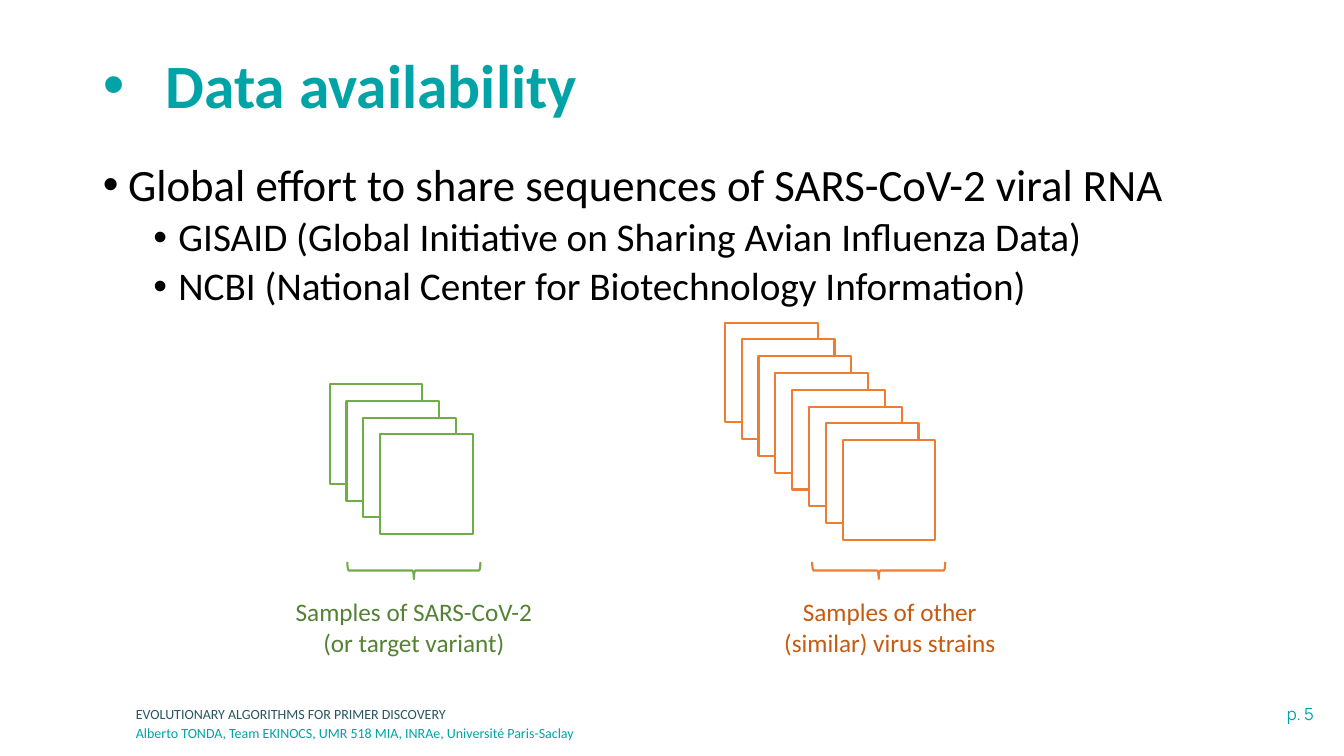
from lxml import etree
from pptx import Presentation
from pptx.dml.color import RGBColor
from pptx.enum.shapes import MSO_SHAPE
from pptx.enum.text import MSO_ANCHOR, MSO_AUTO_SIZE, PP_ALIGN
from pptx.oxml.ns import qn
from pptx.util import Inches, Pt

LEFT, CENTER, RIGHT = PP_ALIGN.LEFT, PP_ALIGN.CENTER, PP_ALIGN.RIGHT
TOP, MIDDLE = MSO_ANCHOR.TOP, MSO_ANCHOR.MIDDLE
NO_AUTOFIT = MSO_AUTO_SIZE.NONE
RECTANGLE, LEFT_BRACE = MSO_SHAPE.RECTANGLE, MSO_SHAPE.LEFT_BRACE

TEAL = RGBColor(0x00, 0xA3, 0xA6)
DARK_TEAL = RGBColor(0x27, 0x56, 0x62)
BLACK = RGBColor(0x00, 0x00, 0x00)
WHITE = RGBColor(0xFF, 0xFF, 0xFF)
GREEN = RGBColor(0x70, 0xAD, 0x47)
DARK_GREEN = RGBColor(0x54, 0x82, 0x35)
ORANGE = RGBColor(0xED, 0x7D, 0x31)
DARK_ORANGE = RGBColor(0xC5, 0x5A, 0x11)

CARD_WIDTH, CARD_HEIGHT, CARD_STEP = 0.92, 0.99, 1 / 6
BRACE_DEPTH, BRACE_SPAN = 0.17, 1.32


def write(paragraph, text, size, color, font="Calibri", bold=False,
          align=LEFT, line_spacing=None, before=0, bullet_indent=None):
    """Fill a paragraph; bullet_indent is (text margin, hanging) in inches."""
    paragraph.alignment = align
    paragraph.space_before = Pt(before)
    if line_spacing:
        paragraph.line_spacing = line_spacing
    if bullet_indent:
        margin, hanging = bullet_indent
        properties = paragraph._p.get_or_add_pPr()
        properties.set("marL", str(Inches(margin)))
        properties.set("indent", str(-Inches(hanging)))
        etree.SubElement(properties, qn("a:buFont"), typeface="Arial")
        etree.SubElement(properties, qn("a:buChar"), char="•")
    run = paragraph.add_run()
    run.text = text
    run.font.name = font
    run.font.size = Pt(size)
    run.font.bold = bold
    run.font.color.rgb = color


def place(placeholder, box, anchor):
    placeholder.left, placeholder.top, placeholder.width, placeholder.height = map(Inches, box)
    frame = placeholder.text_frame
    frame.auto_size = NO_AUTOFIT
    frame.vertical_anchor = anchor
    return frame


def add_label(slide, box, text, size, color, **text_format):
    frame = slide.shapes.add_textbox(*map(Inches, box)).text_frame
    frame.word_wrap = True
    write(frame.paragraphs[0], text, size, color, **text_format)


def add_outline(slide, preset, box, color):
    outline = slide.shapes.add_shape(preset, *map(Inches, box))
    outline.shadow.inherit = False
    outline.line.color.rgb = color
    outline.line.width = Pt(1.5)
    return outline


def add_heading(slide, box):
    frame = place(slide.shapes.title, box, MIDDLE)
    write(frame.paragraphs[0], "Data availability", 44, TEAL, bold=True,
          line_spacing=0.9, bullet_indent=(0.62, 0.62))


def add_sources(slide, box):
    frame = place(slide.placeholders[1], box, TOP)
    sources = [
        (0, "Global effort to share sequences of SARS-CoV-2 viral RNA"),
        (1, "GISAID (Global Initiative on Sharing Avian Influenza Data)"),
        (1, "NCBI (National Center for Biotechnology Information)"),
    ]
    for index, (level, text) in enumerate(sources):
        paragraph = frame.add_paragraph() if index else frame.paragraphs[0]
        paragraph.level = level
        write(paragraph, text, 32 - 4 * level, BLACK, line_spacing=0.9,
              before=5 * level, bullet_indent=(0.25 + 0.5 * level, 0.25))


def add_sample_stack(slide, box, count, brace_offset, caption_offset,
                     caption, color, caption_color):
    """Cascade of cards from the box's corner, with brace and caption below."""
    left, top, height = box
    for index in range(count):
        shift = index * CARD_STEP
        card = add_outline(slide, RECTANGLE,
                           (left + shift, top + shift, CARD_WIDTH, CARD_HEIGHT), color)
        card.fill.solid()
        card.fill.fore_color.rgb = WHITE

    # Brace turned to point down at the caption
    brace = add_outline(slide, LEFT_BRACE,
                        (left + brace_offset, top + height - 1.58, BRACE_DEPTH, BRACE_SPAN),
                        color)
    brace.fill.background()
    brace.rotation = 270

    add_label(slide, (left + caption_offset, top + height - 0.71, 2.67, 0.71),
              caption, 18, caption_color, align=CENTER)


def add_footer(slide, box):
    left, top, width = box
    add_label(slide, (left + 9.6, top - 0.02, 2.28, 0.3), "p. 5", 12, TEAL,
              font="Manrope", align=RIGHT)
    add_label(slide, (left, top, width, 0.28),
              "EVOLUTIONARY ALGORITHMS FOR PRIMER DISCOVERY", 10, DARK_TEAL)
    add_label(slide, (left, top + 0.19, width, 0.28),
              "Alberto TONDA, Team EKINOCS, UMR 518 MIA, INRAe, Université Paris-Saclay",
              10, TEAL)


def main():
    deck = Presentation()
    deck.slide_width, deck.slide_height = Inches(13.33), Inches(7.5)
    slide = deck.slides.add_slide(deck.slide_layouts[1])

    add_footer(slide, (1.25, 6.95, 7.34))
    add_heading(slide, (0.92, 0.4, 11.5, 0.95))
    add_sources(slide, (0.92, 1.56, 11.5, 2.5))
    add_sample_stack(slide, (3.27, 3.81, 2.77), 4, 0.75, -0.5,
                     "Samples of SARS-CoV-2 (or target variant)", GREEN, DARK_GREEN)
    add_sample_stack(slide, (7.19, 3.2, 3.38), 8, 1.44, 0.3,
                     "Samples of other (similar) virus strains", ORANGE, DARK_ORANGE)
    deck.save("out.pptx")


if __name__ == "__main__":
    main()
